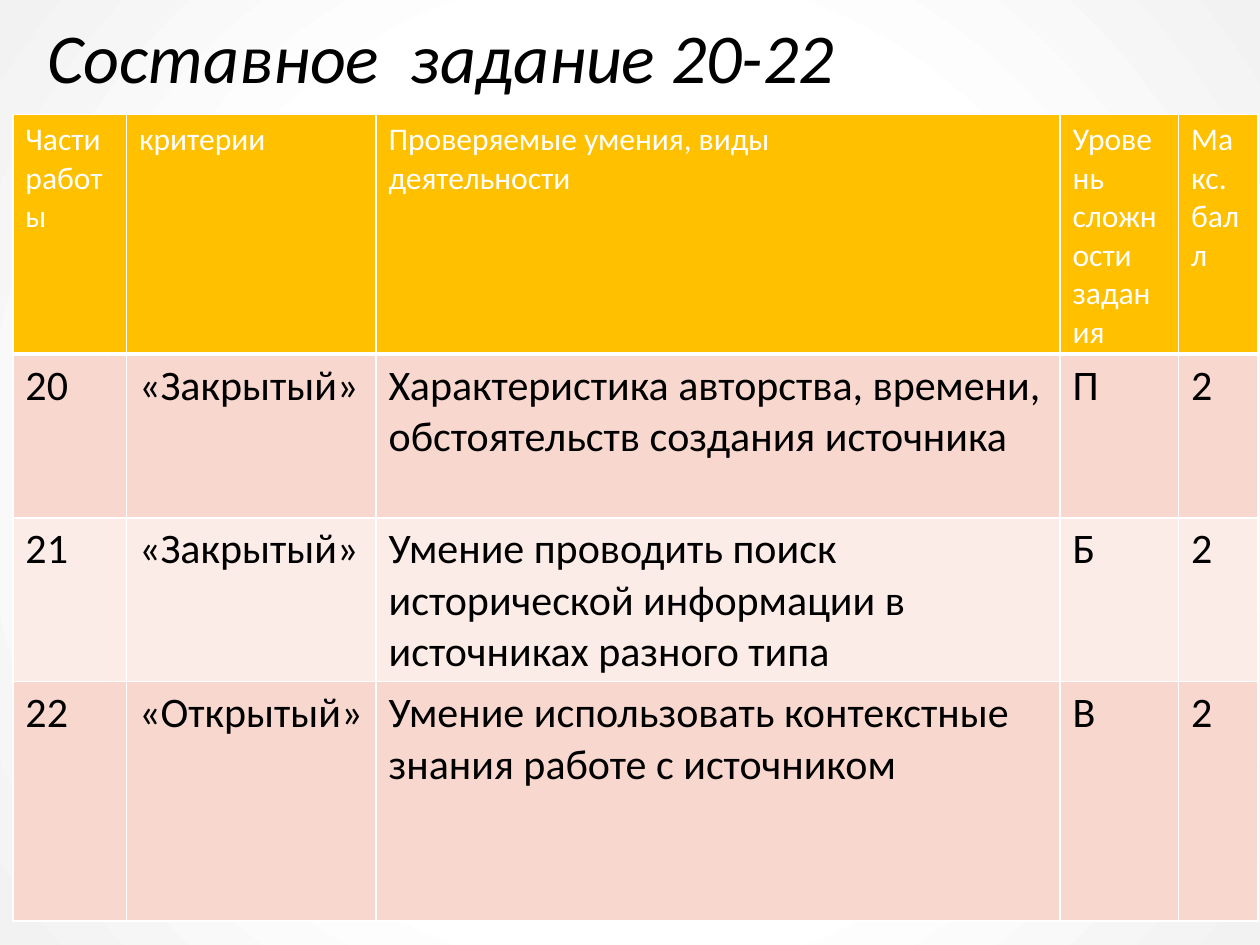
from lxml.etree import SubElement
from pptx import Presentation
from pptx.dml.color import RGBColor
from pptx.enum.shapes import MSO_SHAPE
from pptx.enum.text import MSO_ANCHOR
from pptx.oxml.ns import qn
from pptx.util import Cm, Pt

COLORS = {
    "white": "FFFFFF",
    "edge": "F2F2F2",
    "ink": "000000",
    "header": "FFC000",
    "band_dark": "F8D7CE",
    "band_light": "FCECE8",
}
FONT = "Calibri"
COLUMN_WIDTHS = [2.29, 5.03, 13.79, 2.39, 1.6]
ROW_HEIGHTS = [4.83, 3.3, 3.3, 4.83]
HEADINGS = [
    ["Части", "работы"],
    ["критерии"],
    ["Проверяемые умения, виды", "деятельности"],
    ["Уровень", "сложности", "задания"],
    ["Макс.", "балл"],
]
TASKS = [
    ["20", "«Закрытый»",
     "Характеристика авторства, времени, обстоятельств создания источника", "П", "2"],
    ["21", "«Закрытый»",
     "Умение проводить поиск исторической информации в источниках разного типа", "Б", "2"],
    ["22", "«Открытый»",
     "Умение использовать контекстные знания работе с источником", "В", "2"],
]


def rgb(name):
    return RGBColor.from_string(COLORS[name])


def add_run(paragraph, text, size, color, italic=False):
    run = paragraph.add_run()
    run.text = text
    run.font.name = FONT
    run.font.size = Pt(size)
    run.font.bold = False
    run.font.italic = italic
    run.font.color.rgb = rgb(color)


def add_solid(parent, color):
    fill = SubElement(parent, qn("a:solidFill"))
    SubElement(fill, qn("a:srgbClr"), val=COLORS[color])


def add_backdrop(slide, left, top, width, height):
    backdrop = slide.shapes.add_shape(MSO_SHAPE.RECTANGLE, left, top, width, height)
    backdrop.shadow.inherit = False
    backdrop.line.fill.background()
    backdrop.fill.gradient()
    gradient = backdrop._element.spPr.find(qn("a:gradFill"))
    for child in list(gradient):
        gradient.remove(child)
    stops = SubElement(gradient, qn("a:gsLst"))
    for position, color in [(0, "white"), (58, "white"), (100, "edge")]:
        stop = SubElement(stops, qn("a:gs"), pos=str(position * 1000))
        SubElement(stop, qn("a:srgbClr"), val=COLORS[color])
    circle = SubElement(gradient, qn("a:path"), path="circle")
    SubElement(circle, qn("a:fillToRect"), l="50000", t="50000", r="50000", b="50000")


def add_title(slide, left, top, width, height):
    frame = slide.shapes.add_textbox(left, top, width, height).text_frame
    frame.word_wrap = True
    frame.vertical_anchor = MSO_ANCHOR.MIDDLE
    frame.margin_bottom = Cm(1.68)
    heading = frame.paragraphs[0]
    heading.line_spacing = 0.9
    add_run(heading, "Составное  задание 20-22", 40, "ink", italic=True)


def set_borders(cell, bottom):
    properties = cell._tc.get_or_add_tcPr()
    for side, points in [("L", 1), ("R", 1), ("T", 1), ("B", bottom)]:
        border = SubElement(properties, qn(f"a:ln{side}"), w=str(Pt(points)))
        add_solid(border, "white")


def fill_cell(cell, lines, size, ink, fill, bottom=1):
    set_borders(cell, bottom)
    cell.fill.solid()
    cell.fill.fore_color.rgb = rgb(fill)
    frame = cell.text_frame
    for index, line in enumerate(lines):
        paragraph = frame.add_paragraph() if index else frame.paragraphs[0]
        add_run(paragraph, line, size, ink)


def add_task_table(slide, left, top, width, height):
    table = slide.shapes.add_table(
        len(ROW_HEIGHTS), len(COLUMN_WIDTHS), left, top, width, height
    ).table
    table.horz_banding = False
    for column, share in zip(table.columns, COLUMN_WIDTHS):
        column.width = int(width * share / sum(COLUMN_WIDTHS))
    for row, share in zip(table.rows, ROW_HEIGHTS):
        row.height = int(height * share / sum(ROW_HEIGHTS))
    for column, lines in enumerate(HEADINGS):
        fill_cell(table.cell(0, column), lines, 18, "white", "header", bottom=3)
    for row, task in enumerate(TASKS, start=1):
        band = "band_dark" if row % 2 else "band_light"
        for column, text in enumerate(task):
            fill_cell(table.cell(row, column), [text], 24, "ink", band)


def main():
    deck = Presentation()
    deck.slide_width, deck.slide_height = Cm(25.4), Cm(19.05)
    slide = deck.slides.add_slide(deck.slide_layouts[6])
    add_backdrop(slide, 0, 0, deck.slide_width, deck.slide_height)
    add_title(slide, Cm(0.7), 0, Cm(23.8), Cm(4))
    add_task_table(slide, Cm(0.26), Cm(2.31), Cm(sum(COLUMN_WIDTHS)), Cm(sum(ROW_HEIGHTS)))
    deck.save("out.pptx")


if __name__ == "__main__":
    main()
